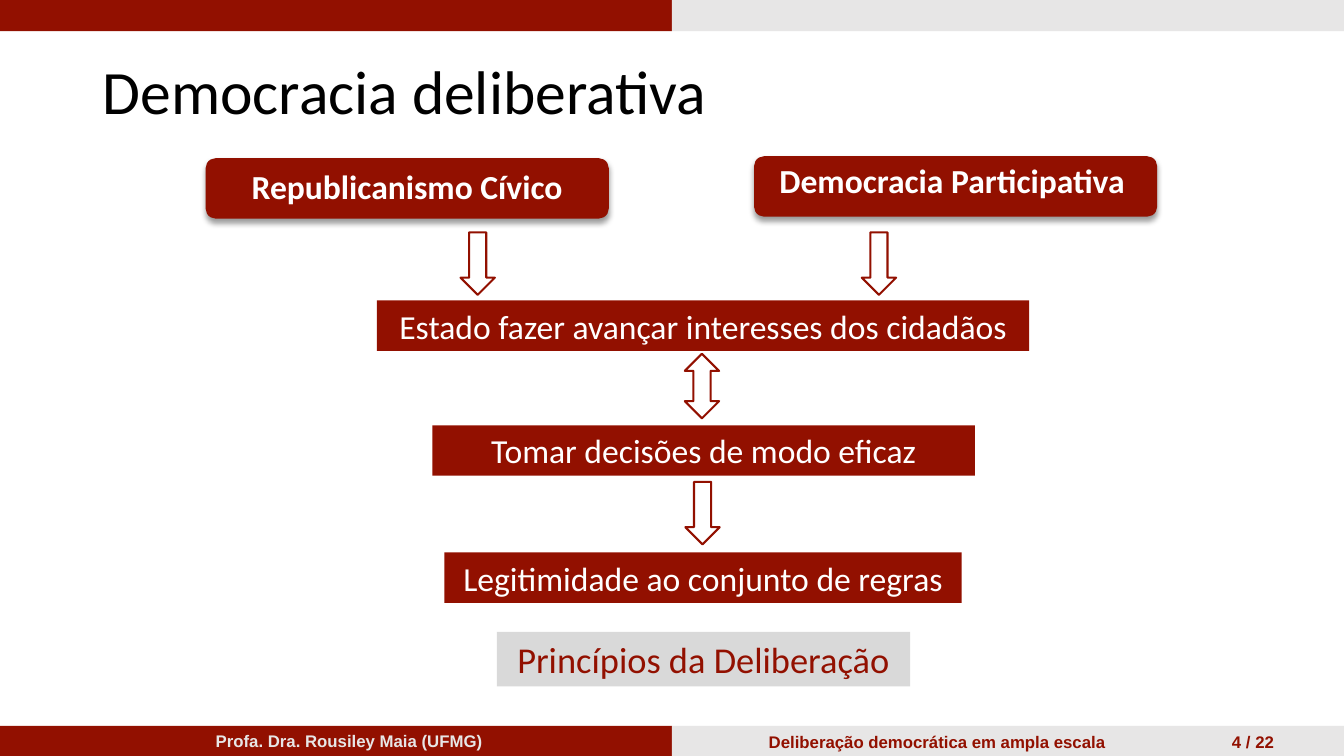
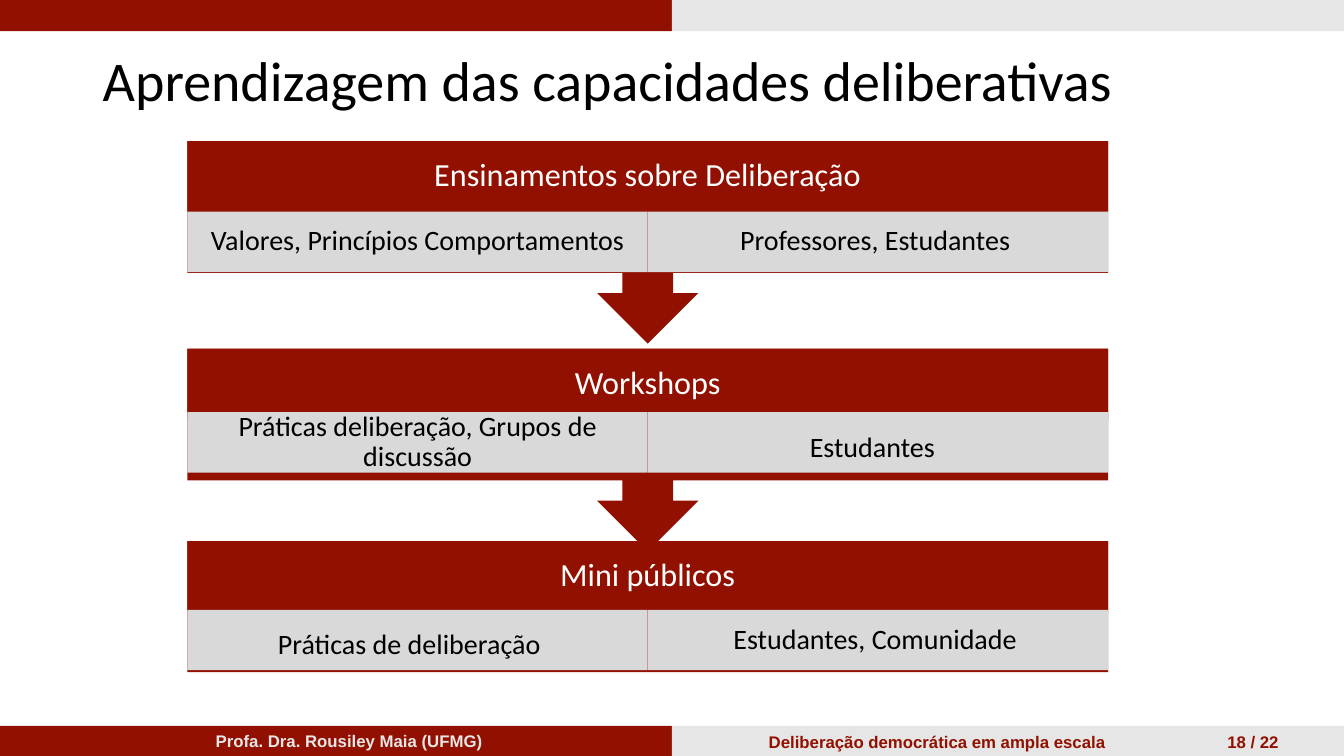
"""Build two slides on deliberative democracy with shared bands, titles and footers."""
from dataclasses import dataclass

from lxml.etree import SubElement
from pptx import Presentation
from pptx.dml.color import RGBColor
from pptx.enum.shapes import MSO_SHAPE
from pptx.enum.text import MSO_ANCHOR, MSO_AUTO_SIZE, PP_ALIGN
from pptx.oxml.ns import qn
from pptx.util import Pt


@dataclass(frozen=True)
class Theme:
    red: RGBColor = RGBColor(0x92, 0x10, 0x00)
    light: RGBColor = RGBColor(0xE7, 0xE6, 0xE6)
    grey: RGBColor = RGBColor(0xD9, 0xD9, 0xD9)
    white: RGBColor = RGBColor(0xFF, 0xFF, 0xFF)
    black: RGBColor = RGBColor(0x00, 0x00, 0x00)
    body_font: str = "Calibri"
    footer_font: str = "Arial"
    footer_size: float = 12
    label_size: float = 24
    result_size: float = 26
    header_size: float = 23
    cell_size: float = 20


THEME = Theme()
WIDTH, HEIGHT = 960, 540
BAND_HEIGHT = 22.3
FOOTER_TOP = 518.4
TITLE_LEFT, TITLE_WIDTH, TITLE_HEIGHT = 66.2, 828, 104.4
INSETS = (7.2, 3.6, 7.2, 3.6)
HEADER_INSETS = (13, 13, 13, 13)
STAGE_LEFT, STAGE_WIDTH = 133.9, 657.6
HEADER_HEIGHT, CELL_HEIGHT = 50.4, 43.2
CALLOUT_HEIGHT, BASE_HEIGHT = 144.7, 93.6


def write(shape, text, size, color, font=THEME.body_font, bold=False,
          align=PP_ALIGN.CENTER, anchor=MSO_ANCHOR.MIDDLE, insets=INSETS, spacing=0.9):
    frame = shape.text_frame
    frame.word_wrap = True
    frame.auto_size = MSO_AUTO_SIZE.NONE
    frame.vertical_anchor = anchor
    (frame.margin_left, frame.margin_top,
     frame.margin_right, frame.margin_bottom) = map(Pt, insets)
    paragraph = frame.paragraphs[0]
    paragraph.alignment = align
    paragraph.line_spacing = spacing
    run = paragraph.add_run()
    run.text = text
    run.font.name = font
    run.font.size = Pt(size)
    run.font.bold = bold
    run.font.color.rgb = color


def add_block(slide, kind, box, fill):
    shape = slide.shapes.add_shape(kind, *map(Pt, box))
    shape.shadow.inherit = False
    shape.fill.solid()
    shape.fill.fore_color.rgb = fill
    shape.line.fill.background()
    return shape


def add_soft_shadow(shape):
    effects = shape.element.spPr.find(qn("a:effectLst"))
    shadow = SubElement(effects, qn("a:outerShdw"), blurRad=str(Pt(4)),
                        dist=str(Pt(3)), dir="5400000", rotWithShape="0")
    color = SubElement(shadow, qn("a:srgbClr"), val=str(THEME.black))
    SubElement(color, qn("a:alpha"), val="40000")


def add_outline_arrow(slide, kind, left, top, height):
    arrow = add_block(slide, kind, (left, top, 24.5, height), THEME.white)
    arrow.fill.background()
    arrow.line.color.rgb = THEME.red
    arrow.line.width = Pt(1.5)


def add_tradition(slide, left, top, text, insets):
    shape = add_block(slide, MSO_SHAPE.ROUNDED_RECTANGLE, (left, top, 288, 43.2), THEME.red)
    add_soft_shadow(shape)
    write(shape, text, THEME.label_size, THEME.white, bold=True,
          anchor=MSO_ANCHOR.TOP, insets=insets)


def add_step(slide, box, text, size=THEME.label_size, fill=THEME.red, color=THEME.white):
    shape = add_block(slide, MSO_SHAPE.RECTANGLE, box, fill)
    write(shape, text, size, color, spacing=1)


def add_cell(slide, left, top, text, shift_left=0, shift_down=0):
    box = (left, top, STAGE_WIDTH / 2, CELL_HEIGHT)
    cell = add_block(slide, MSO_SHAPE.RECTANGLE, box, THEME.grey)
    insets = (11.5, 2.2 + 2 * shift_down, 11.5 + 2 * shift_left, 2.2)
    write(cell, text, THEME.cell_size, THEME.black, insets=insets)


def add_stage(slide, top, cell_top, heading, cells, is_last):
    kind = MSO_SHAPE.RECTANGLE if is_last else MSO_SHAPE.DOWN_ARROW_CALLOUT
    height = BASE_HEIGHT if is_last else CALLOUT_HEIGHT
    add_block(slide, kind, (STAGE_LEFT, top, STAGE_WIDTH, height), THEME.red)
    header = add_block(slide, MSO_SHAPE.RECTANGLE,
                       (STAGE_LEFT, top, STAGE_WIDTH, HEADER_HEIGHT), THEME.red)
    write(header, heading, THEME.header_size, THEME.white, insets=HEADER_INSETS)
    for column, cell in enumerate(cells):
        add_cell(slide, STAGE_LEFT + column * STAGE_WIDTH / 2, cell_top, *cell)


def add_footer_text(slide, left, top, width, text, color, align=PP_ALIGN.LEFT):
    box = slide.shapes.add_textbox(*map(Pt, (left, top, width, 21.8)))
    write(box, text, THEME.footer_size, color, font=THEME.footer_font, bold=True,
          align=align, anchor=MSO_ANCHOR.TOP, spacing=1)


def start_slide(presentation, title, title_top, title_size, page):
    slide = presentation.slides.add_slide(presentation.slide_layouts[5])
    for top in (0, FOOTER_TOP):
        for column, fill in enumerate((THEME.red, THEME.light)):
            add_block(slide, MSO_SHAPE.RECTANGLE,
                      (column * WIDTH / 2, top, WIDTH / 2, BAND_HEIGHT), fill)
    add_footer_text(slide, 147, FOOTER_TOP, 225.4, "Profa. Dra. Rousiley Maia (UFMG)", THEME.light)
    add_footer_text(slide, 542, 519.1, 270, "Deliberação democrática em ampla escala", THEME.red)
    add_footer_text(slide, 855, 519.1, 80, f"{page} / 22", THEME.red, PP_ALIGN.CENTER)
    heading = slide.shapes.title
    heading.left, heading.top = Pt(TITLE_LEFT), Pt(title_top)
    heading.width, heading.height = Pt(TITLE_WIDTH), Pt(TITLE_HEIGHT)
    write(heading, title, title_size, THEME.black, align=PP_ALIGN.LEFT)
    return slide


def build_democracy(presentation):
    slide = start_slide(presentation, "Democracia deliberativa", 15.1, 44, 4)
    add_tradition(slide, 146.9, 113, "Republicanismo Cívico", (7.2, 6.5, 7.2, 0))
    add_tradition(slide, 538.6, 111.6, "Democracia Participativa", (7.2, 3.6, 12, 0))
    add_step(slide, (269.3, 214.6, 465.8, 36), "Estado fazer avançar interesses dos cidadãos")
    add_step(slide, (308.9, 303.8, 387.4, 36), "Tomar decisões de modo eficaz")
    add_step(slide, (317.5, 394.6, 369.4, 36), "Legitimidade ao conjunto de regras")
    add_step(slide, (355, 451.4, 295.2, 38.9), "Princípios da Deliberação",
             THEME.result_size, THEME.grey, THEME.red)
    for left, top in ((329, 166), (615.6, 166), (489.6, 344.2)):
        add_outline_arrow(slide, MSO_SHAPE.DOWN_ARROW, left, top, 44.6)
    add_outline_arrow(slide, MSO_SHAPE.UP_DOWN_ARROW, 489.2, 252.7, 46.1)


def build_learning(presentation):
    slide = start_slide(presentation, "Aprendizagem das capacidades deliberativas", 7.2, 40, 18)
    stages = (
        (100.8, 151.2, "Ensinamentos sobre Deliberação",
         (("Valores, Princípios Comportamentos",), ("Professores, Estudantes", 2))),
        (249.1, 294.5, "Workshops",
         (("Práticas deliberação, Grupos de discussão",), ("Estudantes", 4, 4))),
        (386.6, 435.6, "Mini públicos",
         (("Práticas de deliberação", 6, 4), ("Estudantes, Comunidade", 2))),
    )
    for stage in stages:
        add_stage(slide, *stage, is_last=stage is stages[-1])


def main():
    presentation = Presentation()
    presentation.slide_width, presentation.slide_height = Pt(WIDTH), Pt(HEIGHT)
    build_democracy(presentation)
    build_learning(presentation)
    presentation.save("out.pptx")


if __name__ == "__main__":
    main()
